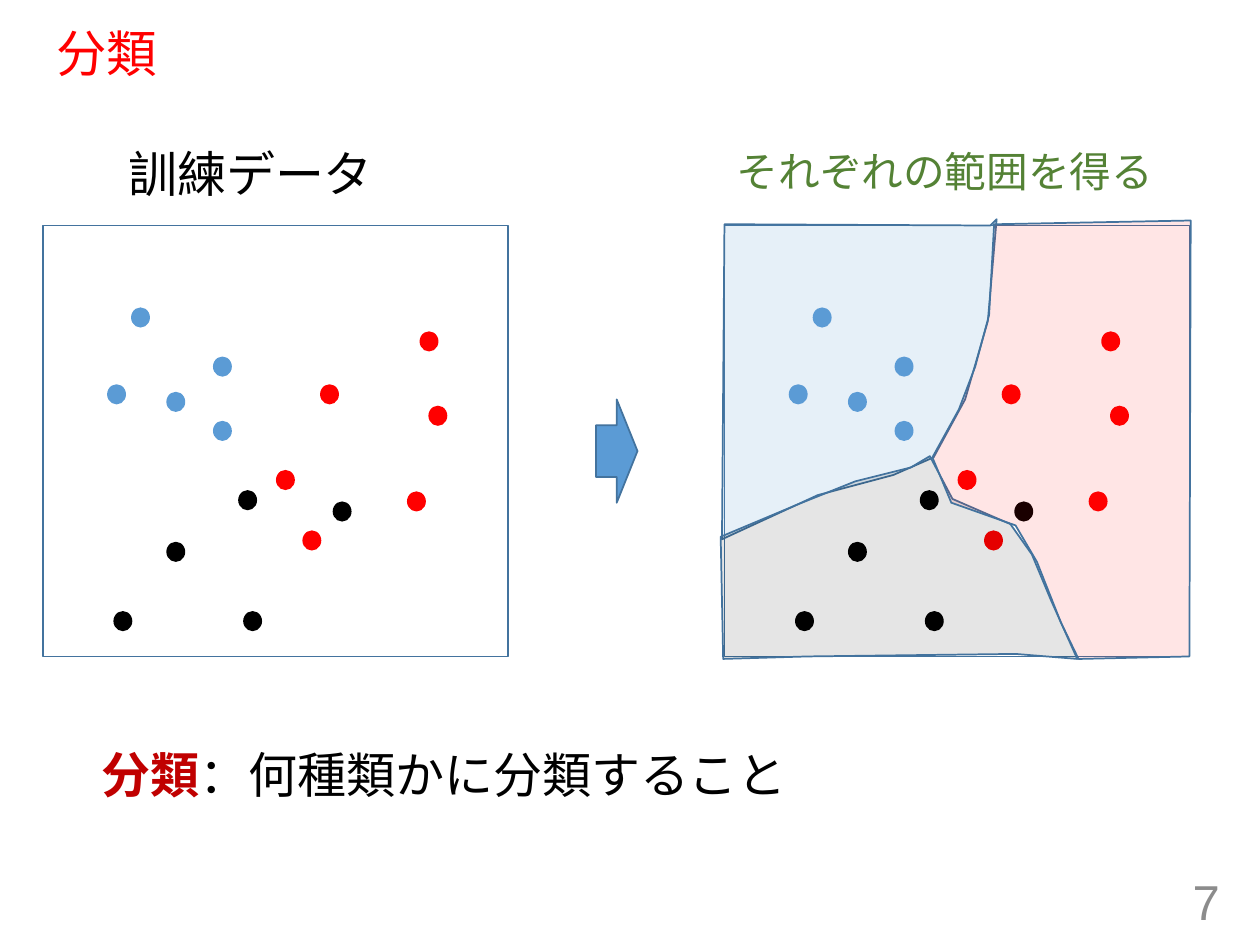
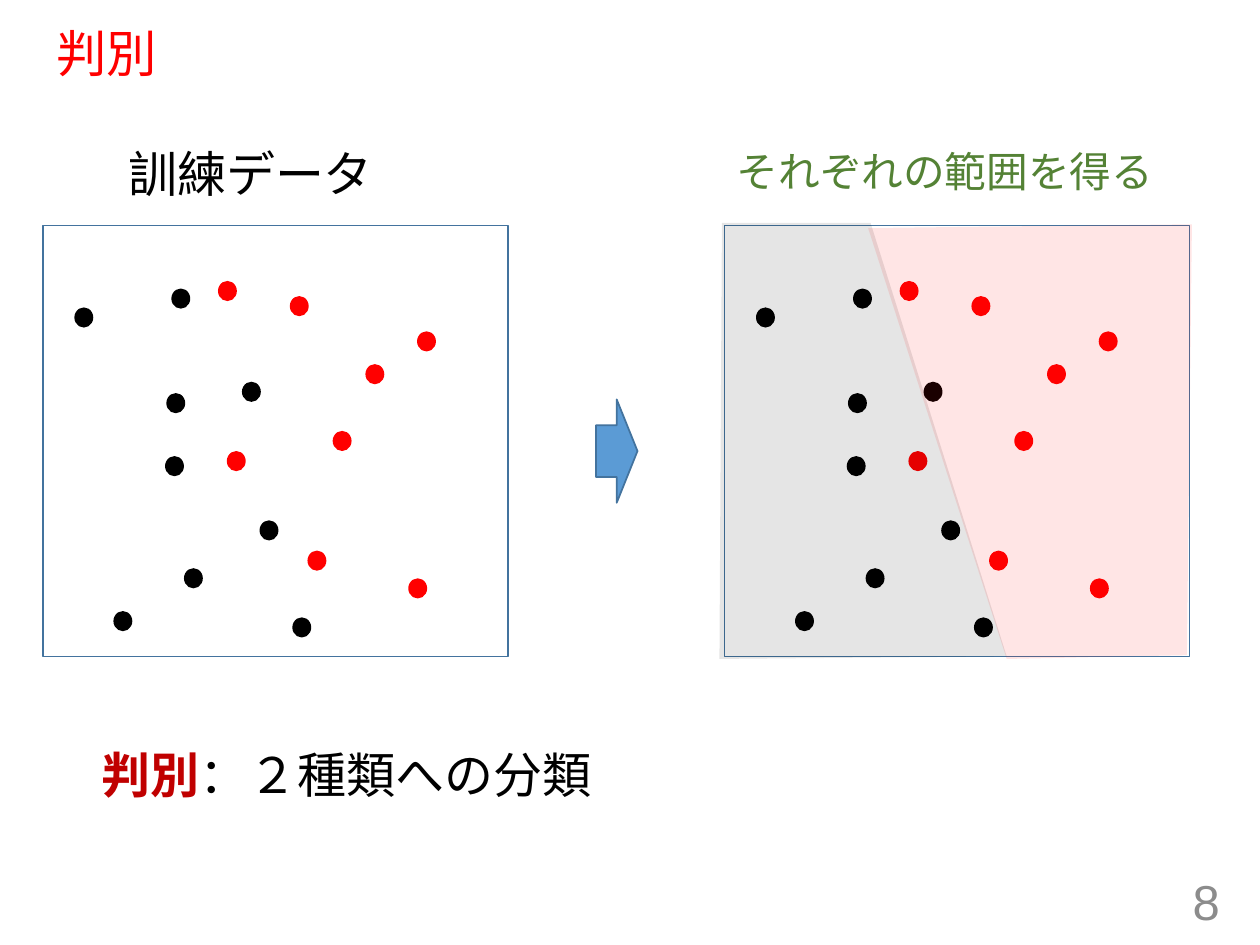
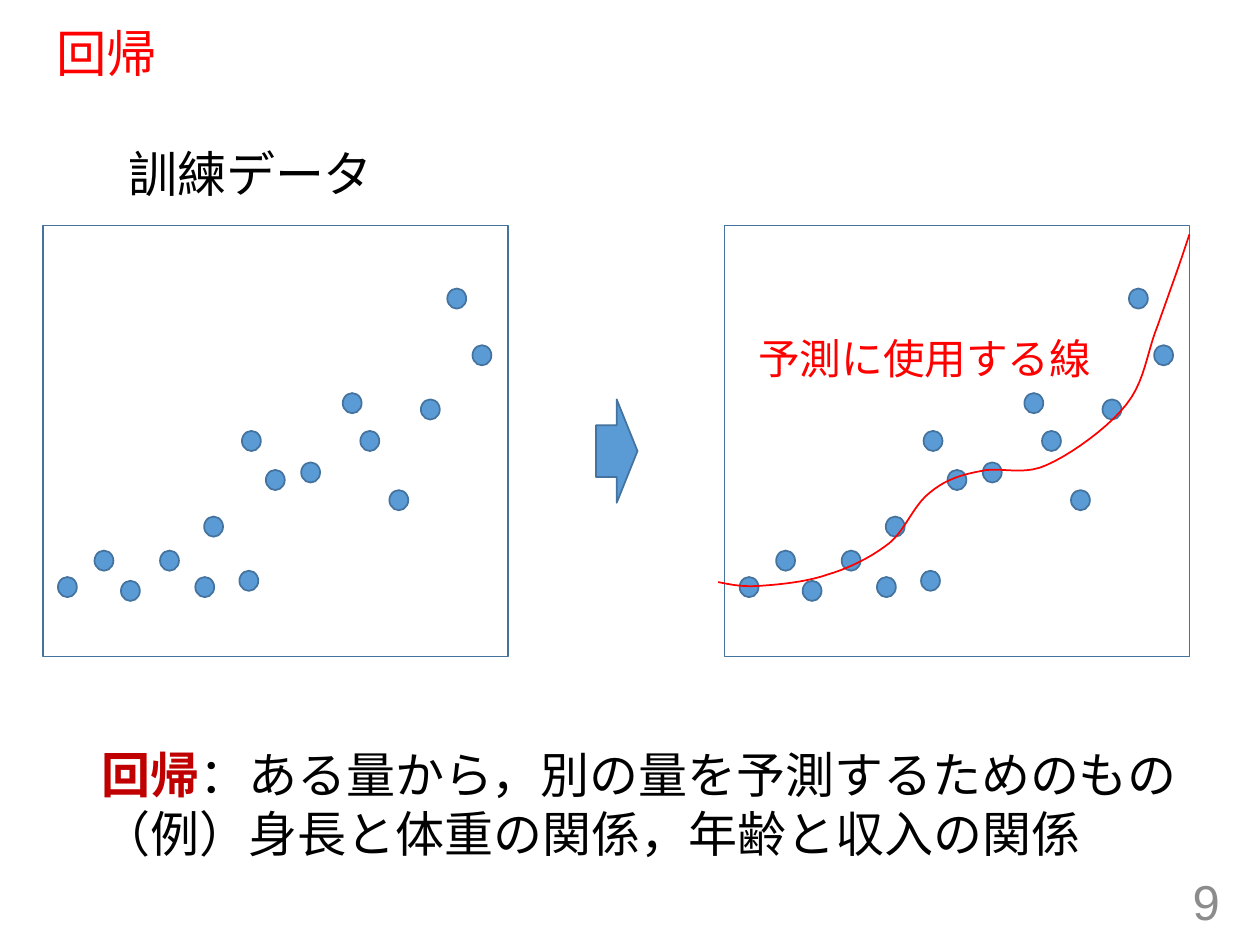
from lxml import etree
from pptx import Presentation
from pptx.dml.color import RGBColor
from pptx.enum import shapes, text
from pptx.oxml.ns import qn
from pptx.util import Inches, Pt

RED = RGBColor(0xFF, 0x00, 0x00)
DARK_RED = RGBColor(0xC0, 0x00, 0x00)
BLACK = RGBColor(0x00, 0x00, 0x00)
BLUE = RGBColor(0x5B, 0x9B, 0xD5)
OUTLINE = RGBColor(0x43, 0x73, 0x9E)
GREEN = RGBColor(0x54, 0x82, 0x35)
GRAY = RGBColor(0x8C, 0x8C, 0x8C)

TRAINING_FRAME = (0.34, 1.79, 3.69, 3.42)
RESULT_SHIFT = 5.41  # from the training frame to the result frame
RANGE_LABEL = (5.75, 1.15, 3.69, 0.81)
LINE_LABEL = (5.92, 2.64, 3, 0.81)


def bezier_points(knots, steps=10):
    """Points along joined cubic curves: start, then (control, control, end) each."""
    points = [knots[0]]
    for i in range(0, len(knots) - 1, 3):
        p0, p1, p2, p3 = knots[i:i + 4]
        for step in range(1, steps + 1):
            t = step / steps
            s = 1 - t
            points.append(tuple(
                s**3 * a + 3 * s * s * t * b + 3 * s * t * t * c + t**3 * d
                for a, b, c, d in zip(p0, p1, p2, p3)))
    return points


class Deck:
    """Shared style and the slide being built."""

    def __init__(self):
        self.prs = Presentation()
        self.prs.slide_width, self.prs.slide_height = Inches(10), Inches(7.5)
        self.slide = None

    def text(self, box, runs, size, color, font="Arial", align=None,
             anchor=text.MSO_ANCHOR.TOP, spacing=None, before=None, grow=False):
        """runs: a list of paragraphs, each a list of (words, accent colour or None)."""
        frame = self.slide.shapes.add_textbox(*map(Inches, box)).text_frame
        frame.word_wrap = True
        frame.vertical_anchor = anchor
        if grow:
            frame.auto_size = text.MSO_AUTO_SIZE.SHAPE_TO_FIT_TEXT
        for i, parts in enumerate(runs):
            paragraph = frame.add_paragraph() if i else frame.paragraphs[0]
            paragraph.font.size, paragraph.font.name = Pt(size), font
            paragraph.font.color.rgb = color
            paragraph.alignment = align
            paragraph.line_spacing, paragraph.space_before = spacing, before
            for words, accent in parts:
                run = paragraph.add_run()
                run.text = words
                if accent is not None:
                    run.font.bold = True
                    run.font.color.rgb = accent

    def style(self, shape, fill=None, line=None, opacity=None):
        shape.shadow.inherit = False
        if fill is None:
            shape.fill.background()
        else:
            shape.fill.solid()
            shape.fill.fore_color.rgb = fill
        if opacity is not None:
            color = shape._element.spPr.find(qn("a:solidFill")).find(qn("a:srgbClr"))
            etree.SubElement(color, qn("a:alpha")).set("val", str(opacity * 1000))
        if line is None:
            shape.line.fill.background()
        else:
            shape.line.color.rgb = line
            shape.line.width = Pt(1)

    def shape(self, kind, box, fill=None, line=None):
        self.style(self.slide.shapes.add_shape(kind, *map(Inches, box)), fill, line)

    def outline(self, points, closed=True, **look):
        start, *rest = [(Inches(x), Inches(y)) for x, y in points]
        builder = self.slide.shapes.build_freeform(*start)
        builder.add_line_segments(rest, close=closed)
        self.style(builder.convert_to_shape(), **look)

    def plot(self, groups, shift=0, line=None):
        """A frame with its dots; groups maps a colour to dot corners."""
        left, *rest = TRAINING_FRAME
        self.shape(shapes.MSO_SHAPE.RECTANGLE, (left + shift, *rest), line=OUTLINE)
        for color, dots in groups:
            for x, y in dots:
                self.shape(shapes.MSO_SHAPE.OVAL, (x + shift, y, 0.15, 0.16), color, line)

    def label(self, box, words, color):
        self.text(box, [[(words, None)]], 23.8, color, spacing=0.9, before=Pt(10))

    def topic(self, number, term, meaning, groups, height=1.04, dot_line=None):
        """Start a slide: headings, definition, both plots and the arrow."""
        self.slide = self.prs.slides.add_slide(self.prs.slide_layouts[6])
        middle = text.MSO_ANCHOR.MIDDLE
        self.text((0.35, 0.19, 9.25, 0.51), [[(term, None)]], 28.8, RED,
                  anchor=middle, spacing=0.9)
        self.text((0.92, 1.09, 3, 0.81), [[("訓練データ", None)]], 28, BLACK,
                  before=Pt(10))
        self.text((7.53, 6.95, 2.25, 0.4), [[(str(number), None)]], 28, GRAY,
                  align=text.PP_ALIGN.RIGHT, anchor=middle)
        first, *more = meaning
        self.text((0.71, 5.86, 8.9, height),
                  [[(term, DARK_RED), (first, None)]] + [[(m, None)] for m in more],
                  28, BLACK, font="Calibri", grow=True)
        self.plot(groups, line=dot_line)
        self.shape(shapes.MSO_SHAPE.RIGHT_ARROW, (4.73, 3.17, 0.33, 0.82), BLUE, OUTLINE)
        self.plot(groups, RESULT_SHIFT, dot_line)


def classification(deck):
    groups = [
        (BLUE, [(1.04, 2.44), (0.85, 3.05), (1.69, 2.83), (1.69, 3.34), (1.32, 3.11)]),
        (BLACK, [(1.32, 4.3), (0.9, 4.85), (1.93, 4.85), (2.64, 3.98), (1.89, 3.89)]),
        (RED, [(2.4, 4.21), (2.19, 3.73), (2.54, 3.05), (3.23, 3.9), (3.4, 3.22),
               (3.33, 2.63)]),
    ]
    deck.topic(7, "分類", ["：何種類かに分類すること"], groups, height=0.57)
    deck.label(RANGE_LABEL, "それぞれの範囲を得る", GREEN)
    # Range of each class
    blue_range = [(5.73, 4.28), (6.49, 3.93), (7.09, 3.77), (7.41, 3.63), (7.66, 3.17),
                  (7.84, 2.55), (7.91, 1.74), (7.86, 1.79), (5.75, 1.78)]
    black_range = [(5.72, 4.26), (6.34, 4), (6.79, 3.82), (7.23, 3.71), (7.38, 3.62),
                   (7.56, 3.96), (8.02, 4.16), (8.19, 4.4), (8.34, 4.76), (8.55, 5.23),
                   (8.06, 5.19), (6.41, 5.21), (5.74, 5.23)]
    red_range = [(7.89, 1.78), (7.85, 2.5), (7.74, 2.91), (7.61, 3.25), (7.4, 3.63),
                 (7.55, 3.99), (8.06, 4.17), (8.23, 4.46), (8.42, 4.94), (8.56, 5.23),
                 (9.44, 5.21), (9.45, 1.75)]
    for points, color, opacity in [(blue_range, BLUE, 15), (black_range, BLACK, 10),
                                   (red_range, RED, 10)]:
        deck.outline(points, fill=color, line=OUTLINE, opacity=opacity)


def discrimination(deck):
    groups = [
        (BLACK, [(0.9, 4.85), (1.32, 3.12), (1.92, 3.03), (2.06, 4.13), (2.32, 4.9),
                 (0.59, 2.44), (1.31, 3.62), (1.46, 4.51), (1.36, 2.29)]),
        (RED, [(3.31, 2.63), (2.3, 2.35), (1.8, 3.58), (2.44, 4.37), (2.64, 3.42),
               (2.9, 2.89), (3.24, 4.59), (1.73, 2.23)]),
    ]
    deck.topic(8, "判別", ["：２種類への分類"], groups)
    deck.label(RANGE_LABEL, "それぞれの範囲を得る", GREEN)
    # The two sides of the boundary
    black_side = [(7.99, 5.21), (6.91, 1.77), (5.73, 1.77), (5.71, 5.23)]
    red_side = [(6.89, 1.81), (7.99, 5.23), (9.42, 5.2), (9.46, 1.78)]
    for points, color in [(black_side, BLACK), (red_side, RED)]:
        deck.outline(points, fill=color, opacity=10)


def regression(deck):
    samples = [(3.55, 2.29), (3.75, 2.74), (3.34, 3.17), (2.86, 3.42), (2.39, 3.67),
               (2.72, 3.12), (3.09, 3.89), (1.92, 3.42), (2.11, 3.73), (1.9, 4.53),
               (1.62, 4.1), (1.55, 4.58), (1.27, 4.37), (0.96, 4.61), (0.75, 4.37),
               (0.46, 4.58)]
    deck.topic(9, "回帰", ["：ある量から，別の量を予測するためのもの",
                         "（例）身長と体重の関係，年齢と収入の関係"],
               [(BLUE, samples)], dot_line=OUTLINE)
    # Prediction line
    knots = [(9.44, 1.86), (9.36, 2.11), (9.27, 2.35), (9.19, 2.58),
             (9.1, 2.8), (9.09, 3.02), (8.94, 3.21), (8.8, 3.39), (8.51, 3.6), (8.31, 3.69),
             (8.12, 3.78), (7.93, 3.7), (7.78, 3.74), (7.62, 3.77), (7.5, 3.81), (7.38, 3.91),
             (7.25, 4.01), (7.19, 4.2), (7.06, 4.31), (6.92, 4.42), (6.74, 4.51), (6.57, 4.56),
             (6.4, 4.62), (6.18, 4.64), (6.03, 4.65), (5.89, 4.66), (5.8, 4.64), (5.7, 4.62)]
    deck.outline(bezier_points(knots), closed=False, line=RED)
    deck.label(LINE_LABEL, "予測に使用する線", RED)


def main():
    deck = Deck()
    classification(deck)
    discrimination(deck)
    regression(deck)
    deck.prs.save("out.pptx")


if __name__ == "__main__":
    main()
